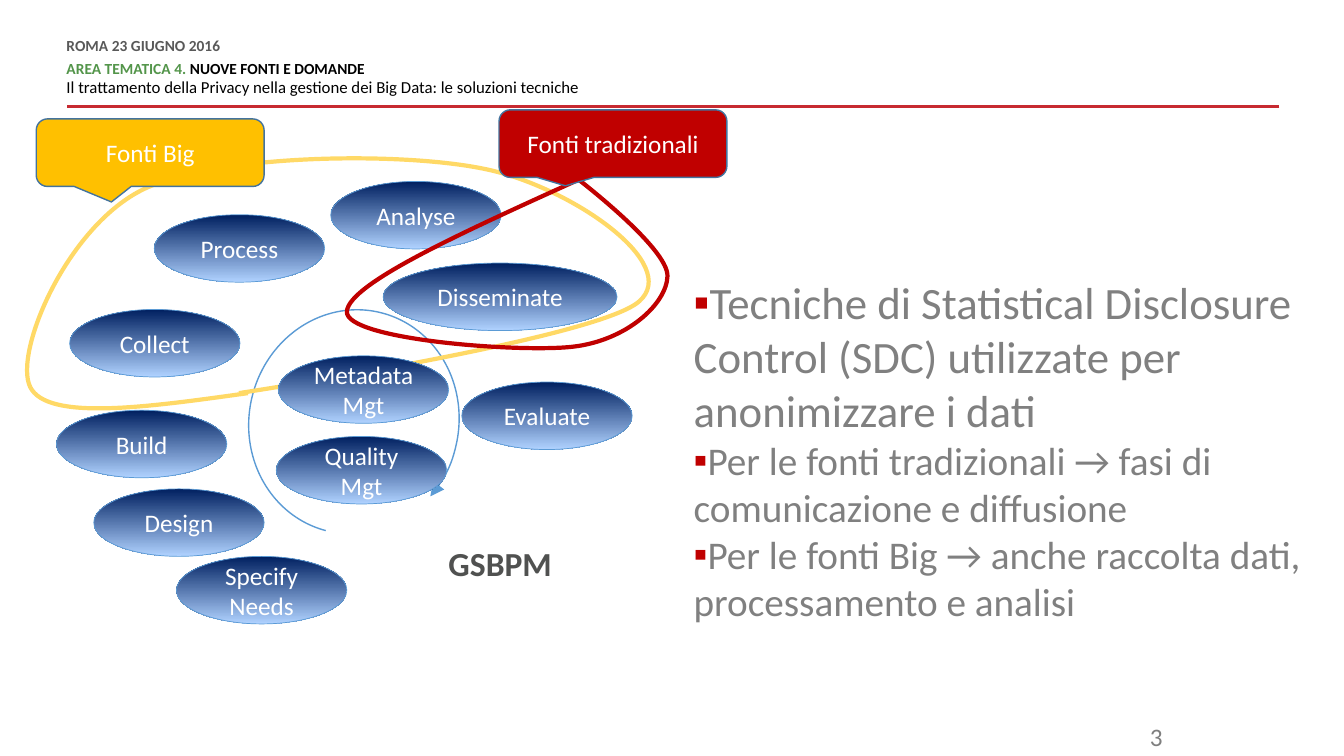
from lxml import etree
from pptx import Presentation
from pptx.dml.color import RGBColor
from pptx.enum.shapes import MSO_CONNECTOR, MSO_SHAPE
from pptx.enum.text import MSO_ANCHOR, PP_ALIGN
from pptx.oxml.ns import qn
from pptx.util import Inches, Pt

COLORS = {
    "rule": "C72A31", "date": "595959", "area": "53954A", "black": "000000",
    "number": "7F7F7F", "body": "808080", "label": "505150", "white": "FFFFFF",
    "navy": "002060", "sky": "B0D2FF", "blue": "5B9BD5", "edge": "43739E",
    "gold": "FFC000", "pale_gold": "FFD966", "red": "C00000",
}


def write(paragraph, text, size=18, color="white", bold=False, align=PP_ALIGN.LEFT):
    """Append a formatted run to a paragraph."""
    paragraph.alignment = align
    run = paragraph.add_run()
    run.text = text
    run.font.name = "Calibri"
    run.font.size = Pt(size)
    run.font.bold = bold
    run.font.color.rgb = RGBColor.from_string(COLORS[color])


def add_label_shape(kind, text, left, top, width, fill=None):
    """Add a captioned shape; without a fill colour it gets the phase gradient."""
    shape = slide.shapes.add_shape(
        kind, Inches(left), Inches(top), Inches(width), Inches(0.67))
    shape.shadow.inherit = False
    if fill:
        shape.fill.solid()
        shape.fill.fore_color.rgb = RGBColor.from_string(COLORS[fill])
    else:
        shape.fill.gradient()
        shape.fill.gradient_angle = 270
        for stop, color, position in zip(shape.fill.gradient_stops, ("navy", "sky"), (0, 1)):
            stop.color.rgb = RGBColor.from_string(COLORS[color])
            stop.position = position
    shape.line.color.rgb = RGBColor.from_string(COLORS["edge" if fill else "blue"])
    shape.line.width = Pt(1 if fill else 0.5)
    shape.text_frame.word_wrap = True
    shape.text_frame.vertical_anchor = MSO_ANCHOR.MIDDLE
    write(shape.text_frame.paragraphs[0], text, align=PP_ALIGN.CENTER)
    return shape


presentation = Presentation()
presentation.slide_width = Inches(13.33)
presentation.slide_height = Inches(7.5)
slide = presentation.slides.add_slide(presentation.slide_layouts[0])
title = slide.shapes.title.element
title.getparent().remove(title)

# Header
rule = slide.shapes.add_connector(
    MSO_CONNECTOR.STRAIGHT, Inches(12.69), Inches(1.06), Inches(0.66), Inches(1.06))
rule.line.color.rgb = RGBColor.from_string(COLORS["rule"])
rule.line.width = Pt(2)
etree.SubElement(rule.element.spPr, qn("a:effectLst"))

header = slide.shapes.add_textbox(
    Inches(0.66), Inches(0.39), Inches(8.34), Inches(0.59)).text_frame
header.word_wrap = True
header.margin_left = header.margin_right = header.margin_top = header.margin_bottom = 0
header_lines = [
    (0, 6, [("ROMA 23 GIUGNO 2016", 11, "date", True)]),
    (0, 0, [("AREA TEMATICA 4. ", 11, "area", True),
            ("NUOVE FONTI E DOMANDE", 11, "black", True)]),
    (3, 6, [("Il trattamento della Privacy nella gestione dei Big Data: "
             "le soluzioni tecniche", 12, "black", False)]),
]
for index, (before, after, runs) in enumerate(header_lines):
    paragraph = header.add_paragraph() if index else header.paragraphs[0]
    paragraph.line_spacing = Pt(10.8)
    paragraph.space_before = Pt(before)
    paragraph.space_after = Pt(after)
    for run in runs:
        write(paragraph, *run)

page_number = slide.shapes.add_textbox(
    Inches(8.63), Inches(7.11), Inches(3), Inches(0.4)).text_frame
page_number.word_wrap = True
write(page_number.paragraphs[0], "3", color="number", align=PP_ALIGN.RIGHT)

# Key points
points = slide.placeholders[1]
points.left, points.top = Inches(6.78), Inches(2.68)
points.width, points.height = Inches(6.38), Inches(3.47)
points.text_frame.vertical_anchor = MSO_ANCHOR.TOP
key_points = [
    ("Tecniche di Statistical Disclosure Control (SDC) utilizzate per anonimizzare i dati", 32),
    ("Per le fonti tradizionali → fasi di comunicazione e diffusione", 28),
    ("Per le fonti Big → anche raccolta dati, processamento e analisi", 28),
]
for index, (text, size) in enumerate(key_points):
    paragraph = points.text_frame.add_paragraph() if index else points.text_frame.paragraphs[0]
    properties = paragraph._p.get_or_add_pPr()
    properties.set("marL", "0")
    properties.set("indent", "0")
    bullet_color = etree.SubElement(properties, qn("a:buClr"))
    etree.SubElement(bullet_color, qn("a:srgbClr"), val=COLORS["red"])
    etree.SubElement(properties, qn("a:buFont"), typeface="Arial")
    etree.SubElement(properties, qn("a:buChar"), char="▪")
    paragraph.line_spacing = 1.0
    paragraph.space_before = Pt(0)
    write(paragraph, text, size, "body")

# Process phases
phases = [
    ("Design", 0.93, 4.85, 1.69),
    ("Specify Needs", 1.75, 5.52, 1.69),
    ("Build", 0.56, 4.07, 1.69),
    ("Collect", 0.69, 3.07, 1.69),
    ("Process", 1.53, 2.13, 1.69),
    ("Analyse", 3.28, 1.8, 1.69),
    ("Disseminate", 3.8, 2.61, 2.32),
    ("Evaluate", 4.58, 3.79, 1.69),
]
for phase in phases:
    add_label_shape(MSO_SHAPE.OVAL, *phase)

cycle = slide.shapes.add_shape(
    MSO_SHAPE.ARC, Inches(2.47), Inches(3.07), Inches(2.08), Inches(2.23))
cycle.adjustments[0], cycle.adjustments[1] = 54.89, 18.79
cycle.rotation = 13
cycle.shadow.inherit = False
cycle.fill.background()
cycle.line.color.rgb = RGBColor.from_string(COLORS["blue"])
cycle.line.width = Pt(1)
etree.SubElement(cycle.line._get_or_add_ln(), qn("a:tailEnd"),
                 type="triangle", w="lg", len="lg")

model_name = slide.shapes.add_textbox(
    Inches(4.35), Inches(5.34), Inches(1.24), Inches(0.5)).text_frame
model_name.word_wrap = False
write(model_name.paragraphs[0], "GSBPM", 24, "label", True)

# Loops around the phases of each kind of source: box, start, Bézier segments, end
source_loops = [
    ("pale_gold", (0.27, 1.57, 6.17, 2.48), (2.46, 3.9), [
        ((1.46, 4.04), (0.47, 4.18), (0.3, 3.84)),
        ((0.13, 3.5), (0.67, 2.23), (1.44, 1.87)),
        ((2.2, 1.52), (4.06, 1.5), (4.87, 1.69)),
        ((5.69, 1.88), (6.76, 2.62), (6.34, 2.99)),
        ((5.93, 3.36), (2.37, 3.9), (2.37, 3.9))]),
    ("red", (3.44, 1.76, 3.18, 1.69), (5.79, 1.76), [
        ((4.62, 2.29), (3.46, 2.81), (3.44, 3.09)),
        ((3.42, 3.37), (5.15, 3.5), (5.68, 3.44)),
        ((6.21, 3.38), (6.61, 3.02), (6.62, 2.74)),
        ((6.63, 2.46), (5.71, 1.76), (5.71, 1.76))]),
]
for color, box, start, segments in source_loops:
    left, top, width, height = map(Inches, box)
    end = segments[-1][-1]
    builder = slide.shapes.build_freeform(*map(Inches, start))
    builder.add_line_segments([tuple(map(Inches, segment[-1])) for segment in segments], close=False)
    loop = builder.convert_to_shape()
    loop.left, loop.top, loop.width, loop.height = left, top, width, height
    outline = next(loop.element.iter(qn("a:path")))
    outline.set("w", str(width))
    outline.set("h", str(height))
    for child in list(outline):
        outline.remove(child)
    commands = [("a:moveTo", [start])]
    commands += [("a:cubicBezTo", segment) for segment in segments]
    commands.append(("a:lnTo", [end]))
    for command, nodes in commands:
        step = etree.SubElement(outline, qn(command))
        for x, y in nodes:
            etree.SubElement(step, qn("a:pt"), x=str(Inches(x) - left), y=str(Inches(y) - top))
    loop.shadow.inherit = False
    loop.fill.background()
    loop.line.color.rgb = RGBColor.from_string(COLORS[color])
    loop.line.width = Pt(3)

CALLOUT = MSO_SHAPE.ROUNDED_RECTANGULAR_CALLOUT
big_sources = add_label_shape(CALLOUT, "Fonti Big", 0.36, 1.18, 2.26, "gold")
big_sources.adjustments[0], big_sources.adjustments[1] = -0.17, 0.73
add_label_shape(CALLOUT, "Fonti tradizionali", 4.95, 1.09, 2.26, "red")

add_label_shape(MSO_SHAPE.OVAL, "Metadata Mgt", 2.76, 3.53, 1.69)
add_label_shape(MSO_SHAPE.OVAL, "Quality Mgt", 2.74, 4.33, 1.69)

presentation.save("out.pptx")
